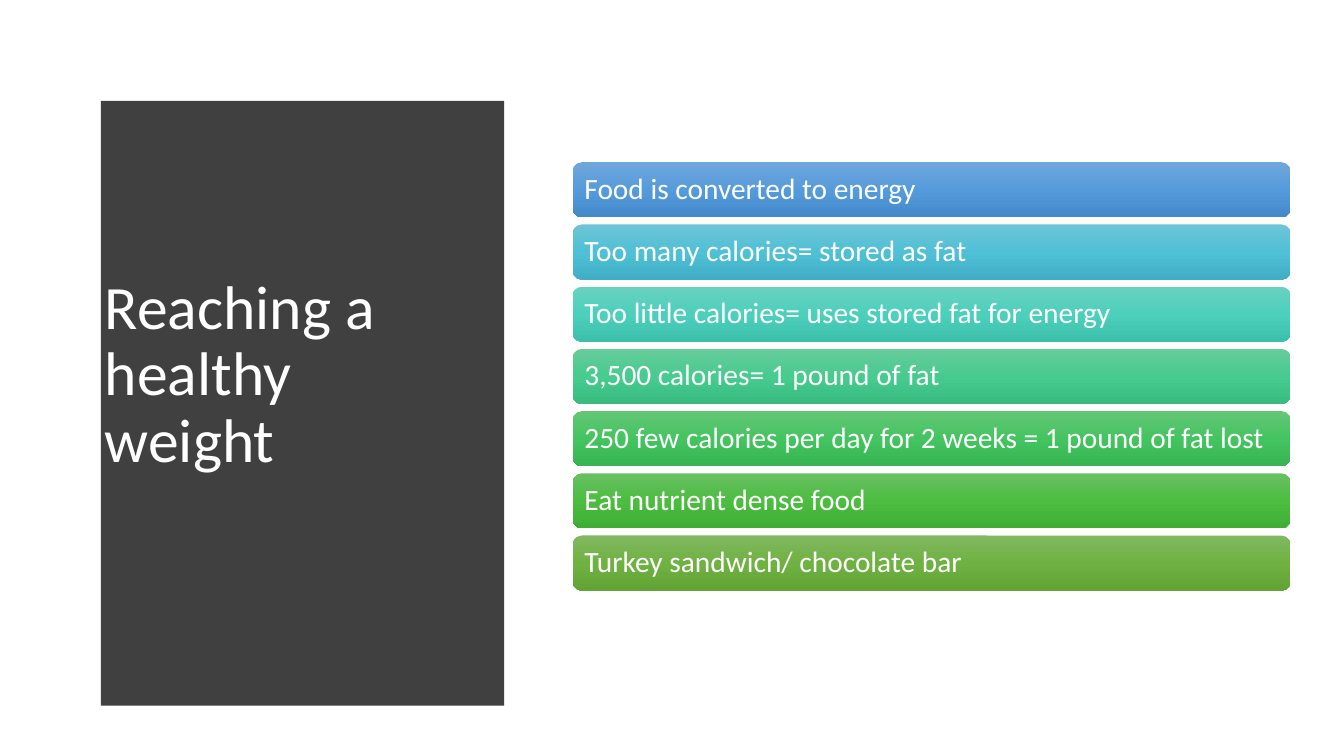
from copy import deepcopy

from pptx import Presentation
from pptx.dml.color import RGBColor
from pptx.enum.shapes import MSO_SHAPE
from pptx.enum.text import MSO_ANCHOR, MSO_AUTO_SIZE, PP_ALIGN
from pptx.oxml.ns import qn
from pptx.util import Inches, Pt

FONT = "Calibri"
WHITE = "FFFFFF"
CHARCOAL = "404040"

# Each fact with the top, middle and bottom colour of its bar
FACTS = [
    ("Food is converted to energy", ("71A6DB", "559BDB", "448ACA")),
    ("Too many calories= stored as fat", ("6EC4D6", "50C0D6", "40AFC5")),
    ("Too little calories= uses stored fat for energy", ("6AD1C0", "4CD0BC", "3CC0AC")),
    ("3,500 calories= 1 pound of fat", ("67CC9A", "47CB8E", "39BB7F")),
    ("250 few calories per day for 2 weeks = 1 pound of fat lost",
     ("64C677", "44C460", "36B552")),
    ("Eat nutrient dense food", ("69C062", "4CBD41", "3FAD34")),
    ("Turkey sandwich/ chocolate bar", ("81B861", "6FB242", "62A336")),
]


def color(hex_value):
    return RGBColor.from_string(hex_value)


def write(shape, text, size, inset=0.1, font_color=WHITE, spacing=0.9):
    frame = shape.text_frame
    frame.word_wrap = True
    frame.auto_size = MSO_AUTO_SIZE.NONE
    frame.vertical_anchor = MSO_ANCHOR.MIDDLE
    frame.margin_left = frame.margin_right = Inches(inset)
    frame.margin_top = frame.margin_bottom = Inches(0.05)
    paragraph = frame.paragraphs[0]
    paragraph.alignment = PP_ALIGN.LEFT
    paragraph.line_spacing = spacing
    run = paragraph.add_run()
    run.text = text
    run.font.name = FONT
    run.font.size = Pt(size)
    run.font.color.rgb = color(font_color)


def fill_gradient(shape, colors):
    """Fill from top to bottom with three evenly spaced colours."""
    shape.fill.gradient()
    shape.fill.gradient_angle = 270
    first = shape._element.spPr.find(qn("a:gradFill")).find(qn("a:gsLst"))[0]
    first.addnext(deepcopy(first))
    for stop, position, hex_value in zip(shape.fill.gradient_stops, (0, 0.5, 1), colors):
        stop.position = position
        stop.color.rgb = color(hex_value)


def title_panel(slide, left, top, width, height):
    # Dark panel whose right edge bulges as a shallow arc
    bulge, peak, steps = 0.24, 0.48 * height, 48
    arc = []
    for step in range(steps + 1):
        y = height * step / steps
        reach = peak if y < peak else height - peak
        x = width - bulge * ((y - peak) / reach) ** 2
        arc.append((left + x, top + y))
    builder = slide.shapes.build_freeform(left, top, scale=Inches(1))
    builder.add_line_segments(arc + [(left, top + height)], close=True)
    panel = builder.convert_to_shape()
    panel.shadow.inherit = False
    panel.fill.solid()
    panel.fill.fore_color.rgb = color(CHARCOAL)
    panel.line.fill.background()

    # Title, moved in front of the panel
    title = slide.shapes.title
    panel._element.addnext(title._element)
    title.left, title.top = Inches(left + 0.41), Inches(top + 0.59)
    title.width, title.height = Inches(3.74), Inches(height - 1.2)
    write(title, "Reaching a healthy weight", size=44)


def fact_bars(slide, left, top, width, height):
    # Equal bars separated by equal gaps
    gap = 0.07
    bar_height = (height - gap * (len(FACTS) - 1)) / len(FACTS)
    for index, (fact, colors) in enumerate(FACTS):
        bar = slide.shapes.add_shape(
            MSO_SHAPE.ROUNDED_RECTANGLE,
            Inches(left), Inches(top + index * (bar_height + gap)),
            Inches(width), Inches(bar_height))
        bar.shadow.inherit = False
        bar.line.fill.background()
        fill_gradient(bar, colors)
        write(bar, fact, size=21, inset=0.09)


def main():
    presentation = Presentation()
    presentation.slide_width = Inches(13.33)
    presentation.slide_height = Inches(7.5)
    slide = presentation.slides.add_slide(presentation.slide_layouts[5])
    title_panel(slide, 0.53, 0.52, 4.79, 6.44)
    fact_bars(slide, 5.68, 1.61, 7.12, 4.25)
    presentation.save("out.pptx")


if __name__ == "__main__":
    main()
